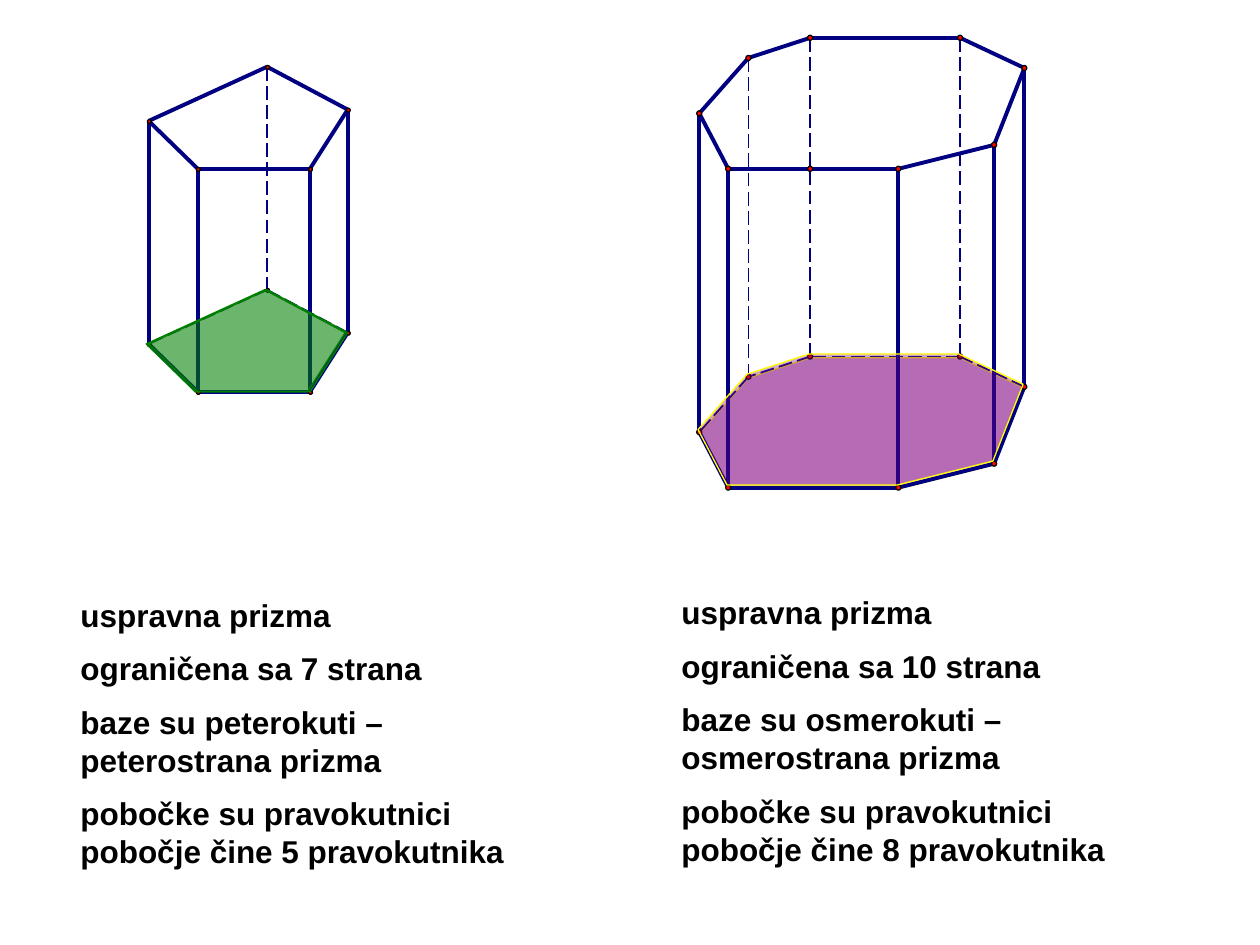
import pptx
import pptx.util
import pptx.dml.color
import pptx.enum.dml
import pptx.enum.shapes
import pptx.enum.text
import pptx.oxml
import pptx.oxml.ns
import lxml.etree

PX = 9144  # EMU per px: 100 px to the inch

THEME = {
    "font": "Arial", "text_size": 18, "text": "000000",
    "edge": "000080", "edge_width": 2.25, "hidden_width": 1,
    "dot": "FF0000", "dot_line": "000000",
    "pentagon": "008000", "octagon": "800080", "octagon_line": "FFFF00",
    "base_opacity": 35,
}

# Content: corners of the top face, front edge first; "hidden" lists back corners
PENTAGONAL = {
    "top": [(157, 134), (246, 134), (276, 87), (212, 53), (118, 96)],
    "height": 177, "hidden": {3}, "dot": 3, "extra_dots": [],
    "fill": THEME["pentagon"], "outline": THEME["pentagon"],
}
OCTAGONAL = {
    "top": [(578, 134), (713, 134), (789, 115), (813, 54),
            (762, 30), (643, 30), (594, 46), (555, 90)],
    "height": 253, "hidden": {4, 5, 6}, "dot": 4, "extra_dots": [(643, 134)],
    "fill": THEME["octagon"], "outline": THEME["octagon_line"],
}
DESCRIPTIONS = [
    ((54, 468, 374, 236), [
        "uspravna prizma",
        "ograničena sa 7 strana",
        "baze su peterokuti – peterostrana prizma",
        "pobočke su pravokutnici pobočje čine 5 pravokutnika",
    ]),
    ((531, 466, 374, 236), [
        "uspravna prizma",
        "ograničena sa 10 strana",
        "baze su osmerokuti – osmerostrana prizma",
        "pobočke su pravokutnici pobočje čine 8 pravokutnika",
    ]),
]


def color(name):
    return pptx.dml.color.RGBColor.from_string(name)


def emu(*lengths):
    return [length * PX for length in lengths]


def shifted(points, dx, dy):
    return [(x + dx, y + dy) for x, y in points]


def paint(shape, fill, line):
    shape.shadow.inherit = False
    shape.fill.solid()
    shape.fill.fore_color.rgb = color(fill)
    shape.line.color.rgb = color(line)
    shape.line.width = 0


def add_edge(shapes, start, end, hidden):
    edge = shapes.add_connector(
        pptx.enum.shapes.MSO_CONNECTOR.STRAIGHT, *emu(*start, *end))
    edge.line.color.rgb = color(THEME["edge"])
    edge.line.width = pptx.util.Pt(THEME["hidden_width" if hidden else "edge_width"])
    if hidden:
        edge.line.dash_style = pptx.enum.dml.MSO_LINE.LONG_DASH
    properties = edge._element.spPr
    lxml.etree.SubElement(properties, pptx.oxml.ns.qn("a:effectLst"))


def add_dot(shapes, center, size):
    x, y = center
    dot = shapes.add_shape(pptx.enum.shapes.MSO_SHAPE.OVAL,
                           *emu(x - size // 2, y - size // 2, size, size))
    paint(dot, THEME["dot"], THEME["dot_line"])


def add_base(page, prism, dx, dy):
    corners = shifted(prism["top"], dx, prism["height"] + dy)
    builder = page.shapes.build_freeform(*corners[0], scale=PX)
    builder.add_line_segments(corners[1:], close=True)
    base = builder.convert_to_shape()
    paint(base, prism["fill"], prism["outline"])
    tint = base.fill._xPr.find(".//" + pptx.oxml.ns.qn("a:srgbClr"))
    alpha = lxml.etree.SubElement(tint, pptx.oxml.ns.qn("a:alpha"))
    alpha.set("val", str(THEME["base_opacity"] * 1000))


def add_frame(page, prism):
    shapes = page.shapes.add_group_shape().shapes
    top, hidden = prism["top"], prism["hidden"]
    bottom = shifted(top, 0, prism["height"])
    for here in range(len(top)):
        after = (here + 1) % len(top)
        add_edge(shapes, bottom[here], bottom[after], bool({here, after} & hidden))
        add_edge(shapes, top[here], top[after], False)
        add_edge(shapes, top[here], bottom[here], here in hidden)
    for point in top + bottom + prism["extra_dots"]:
        add_dot(shapes, point, prism["dot"])


def add_text(page, lines, *, place, size, font, ink, bold=True):
    box = page.shapes.add_textbox(*emu(*place))
    frame = box.text_frame
    frame.word_wrap = True
    frame.auto_size = pptx.enum.text.MSO_AUTO_SIZE.SHAPE_TO_FIT_TEXT
    for index, line in enumerate(lines):
        para = frame.add_paragraph() if index else frame.paragraphs[0]
        para.space_before = pptx.util.Pt(size / 2)
        span = para.add_run()
        span.text = line
        span.font.name = font
        span.font.size = pptx.util.Pt(size)
        span.font.bold = bold
        span.font.color.rgb = color(ink)


def main():
    deck = pptx.Presentation()
    deck.slide_width, deck.slide_height = emu(1000, 750)
    page = deck.slides.add_slide(deck.slide_layouts[6])

    # Octagonal prism, between two tinted layers of its base
    add_base(page, OCTAGONAL, 0, 1)
    add_frame(page, OCTAGONAL)

    # Pentagonal prism, under two tinted layers of its base
    add_frame(page, PENTAGONAL)
    for dx in (0, -2):
        add_base(page, PENTAGONAL, dx, 0)
    add_base(page, OCTAGONAL, -1, -2)

    # Descriptions
    for place, lines in DESCRIPTIONS:
        add_text(page, lines, place=place, size=THEME["text_size"],
                 font=THEME["font"], ink=THEME["text"])

    deck.save("out.pptx")


if __name__ == "__main__":
    main()
